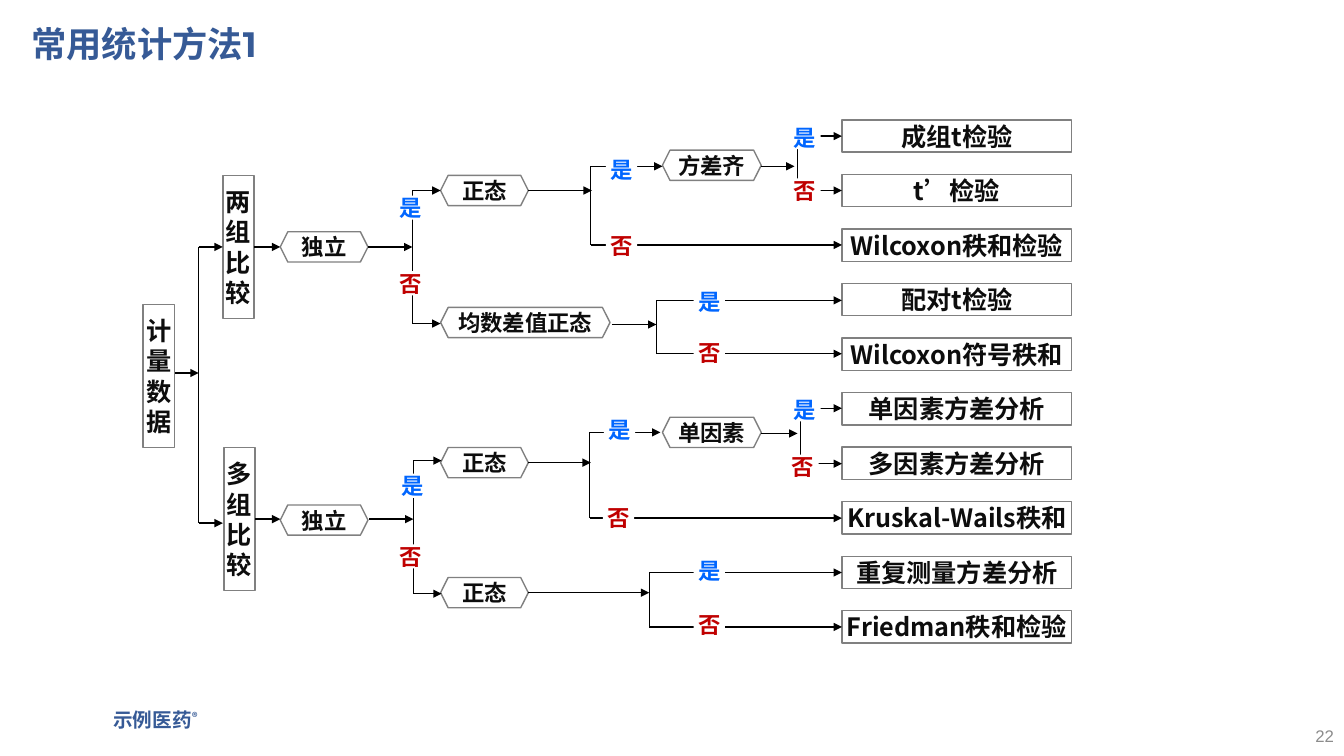
import pptx
import pptx.util
import pptx.dml.color
import pptx.enum.shapes
import pptx.enum.text
import pptx.oxml
import pptx.oxml.ns

Inches = pptx.util.Inches
Pt = pptx.util.Pt
SHAPES = pptx.enum.shapes.MSO_SHAPE
ALIGN = pptx.enum.text.PP_ALIGN
MIDDLE = pptx.enum.text.MSO_ANCHOR.MIDDLE

CJK = "Noto Sans CJK SC"
INK, GREY, BLUE = "0D0D0D", "808080", "365A96"
ANSWER_COLOURS = {"是": "0066FF", "否": "C00000"}

TITLE = "常用统计方法1"
FOOTER = "示例医药"
PAGE_NUMBER = "22"

# text, left, top
GROUPS = [("计量数据", 1.42, 3.02), ("两组比较", 2.21, 1.74), ("多组比较", 2.22, 4.44)]

# text, left, top, width
CONDITIONS = [
    ("独立", 2.78, 2.3, 0.87),
    ("独立", 2.78, 5.01, 0.87),
    ("正态", 4.37, 1.74, 0.87),
    ("正态", 4.37, 4.44, 0.87),
    ("正态", 4.37, 5.73, 0.87),
    ("均数差值正态", 4.37, 3.05, 1.68),
    ("方差齐", 6.57, 1.49, 0.98),
    ("单因素", 6.57, 4.14, 0.98),
]

METHODS = [
    "成组t检验", "t’检验", "Wilcoxon秩和检验", "配对t检验", "Wilcoxon符号秩和",
    "单因素方差分析", "多因素方差分析", "Kruskal-Wails秩和",
    "重复测量方差分析", "Friedman秩和检验",
]
METHOD_LEFT, METHOD_TOP, METHOD_STEP = 8.35, 1.19, 0.541

# trunk start, trunk end, trunk y, spine x, upper y, lower y, upper end, lower end
BRANCHES = [
    (1.74, 1.97, 3.7, 1.97, 2.45, 5.19, 2.21, 2.21),
    (3.65, 4.09, 2.45, 4.09, 1.89, 3.21, 4.37, 4.37),
    (3.66, 4.1, 5.15, 4.1, 4.57, 5.89, 4.38, 4.38),
    (5.24, 5.87, 1.89, 5.86, 1.65, 2.43, 6.57, METHOD_LEFT),
    (6.07, 6.51, 3.22, 6.51, 2.98, 3.51, METHOD_LEFT, METHOD_LEFT),
    (5.24, 5.86, 4.59, 5.85, 4.29, 5.14, 6.55, METHOD_LEFT),
    (5.24, 6.44, 5.88, 6.44, 5.68, 6.22, METHOD_LEFT, METHOD_LEFT),
    (7.55, 7.88, 1.65, 7.91, 1.35, 1.89, METHOD_LEFT, METHOD_LEFT),
    (7.55, 7.91, 4.3, 7.94, 4.05, 4.6, METHOD_LEFT, METHOD_LEFT),
]

# start x, end x, y
DIRECT_ARROWS = [(2.52, 2.78, 2.45), (2.53, 2.78, 5.15)]

# left and top of each answer
ANSWERS = {
    "是": [(3.92, 1.94), (6.01, 1.56), (7.83, 1.24), (6.88, 2.87),
          (6.88, 5.54), (7.83, 3.94), (5.99, 4.14), (3.94, 4.7)],
    "否": [(6.88, 6.08), (7.83, 1.77), (6.01, 2.32), (3.92, 2.69),
          (6.88, 3.38), (3.92, 5.4), (5.98, 5.01), (7.81, 4.51)],
}


def colour(value):
    return pptx.dml.color.RGBColor.from_string(value)


def style(para, size, value, name=CJK, bold=True, align=ALIGN.CENTER):
    para.alignment = align
    para.font.size = Pt(size)
    para.font.bold = bold
    para.font.name = name
    para.font.color.rgb = colour(value)
    defaults = para._p.pPr.find(pptx.oxml.ns.qn("a:defRPr"))
    east_asian = pptx.oxml.parse_xml(
        f'<a:ea {pptx.oxml.ns.nsdecls("a")} typeface="{CJK}"/>')
    defaults.find(pptx.oxml.ns.qn("a:latin")).addnext(east_asian)


def add_node(page, kind, text, area, size, value=INK, line=GREY, fill=None):
    node = page.shapes.add_shape(kind, *map(Inches, area))
    node.shadow.inherit = False
    if fill:
        node.fill.solid()
        node.fill.fore_color.rgb = colour(fill)
    else:
        node.fill.background()
    if line:
        node.line.color.rgb = colour(line)
        node.line.width = Pt(1)
    else:
        node.line.fill.background()
    frame = node.text_frame
    frame.word_wrap = True
    frame.vertical_anchor = MIDDLE
    frame.margin_left = frame.margin_right = frame.margin_top = frame.margin_bottom = 0
    frame.text = text
    style(frame.paragraphs[0], size, value)


def add_line(page, x1, y1, x2, y2, width=1, arrow=True):
    line = page.shapes.add_connector(
        pptx.enum.shapes.MSO_CONNECTOR.STRAIGHT, *map(Inches, (x1, y1, x2, y2)))
    line.line.color.rgb = colour("000000")
    line.line.width = Pt(width)
    namespace = pptx.oxml.ns.nsdecls("a")
    if arrow:
        line.line._get_or_add_ln().append(
            pptx.oxml.parse_xml(f'<a:tailEnd {namespace} type="triangle"/>'))
    line._element.spPr.append(pptx.oxml.parse_xml(f"<a:effectLst {namespace}/>"))


def add_branch(page, start, end, y, spine, upper, lower, upper_end, lower_end):
    add_line(page, spine, upper, upper_end, upper)
    add_line(page, spine, lower, lower_end, lower)
    add_line(page, spine, upper, spine, lower, width=0.5, arrow=False)
    add_line(page, start, y, end, y)


def add_label(page, text, area, **look):
    box = page.shapes.add_textbox(*map(Inches, area))
    frame = box.text_frame
    frame.word_wrap = True
    frame.vertical_anchor = MIDDLE
    frame.text = text
    para = frame.paragraphs[0]
    style(para, align=ALIGN.RIGHT, **look)
    return para


def add_title(page):
    title = page.shapes.title
    title.left, title.top, title.width, title.height = map(Inches, (0.21, 0.22, 11.5, 0.48))
    title.text_frame.text = TITLE
    title.text_frame.vertical_anchor = MIDDLE
    para = title.text_frame.paragraphs[0]
    para.line_spacing = 0.9
    style(para, 25.2, BLUE, name="Montserrat", align=ALIGN.LEFT)


def main():
    deck = pptx.Presentation()
    deck.slide_width, deck.slide_height = Inches(13.33), Inches(7.5)
    page = deck.slides.add_slide(deck.slide_layouts[5])
    add_title(page)

    footer = add_label(page, FOOTER, (0.53, 6.92, 1.53, 0.44), size=14, value=BLUE)
    mark = footer.add_run()
    mark.text = "®"
    mark._r.get_or_add_rPr().set("baseline", "30000")
    add_label(page, PAGE_NUMBER, (10.33, 7.1, 3, 0.4),
              size=12, value="8C8C8C", name="Arial", bold=False)

    for text, left, top in GROUPS:
        add_node(page, SHAPES.RECTANGLE, text, (left, top, 0.31, 1.42), 18)
    for text, left, top, width in CONDITIONS:
        add_node(page, SHAPES.HEXAGON, text, (left, top, width, 0.3), 16)
    for row, text in enumerate(METHODS):
        top = METHOD_TOP + row * METHOD_STEP
        add_node(page, SHAPES.RECTANGLE, text, (METHOD_LEFT, top, 2.28, 0.32), 18)

    for start, end, y in DIRECT_ARROWS:
        add_line(page, start, y, end, y)
    for branch in BRANCHES:
        add_branch(page, *branch)
    for text, places in ANSWERS.items():
        for left, top in places:
            add_node(page, SHAPES.RECTANGLE, text, (left, top, 0.31, 0.24), 16,
                     value=ANSWER_COLOURS[text], line=None, fill="FFFFFF")

    deck.save("out.pptx")


if __name__ == "__main__":
    main()
